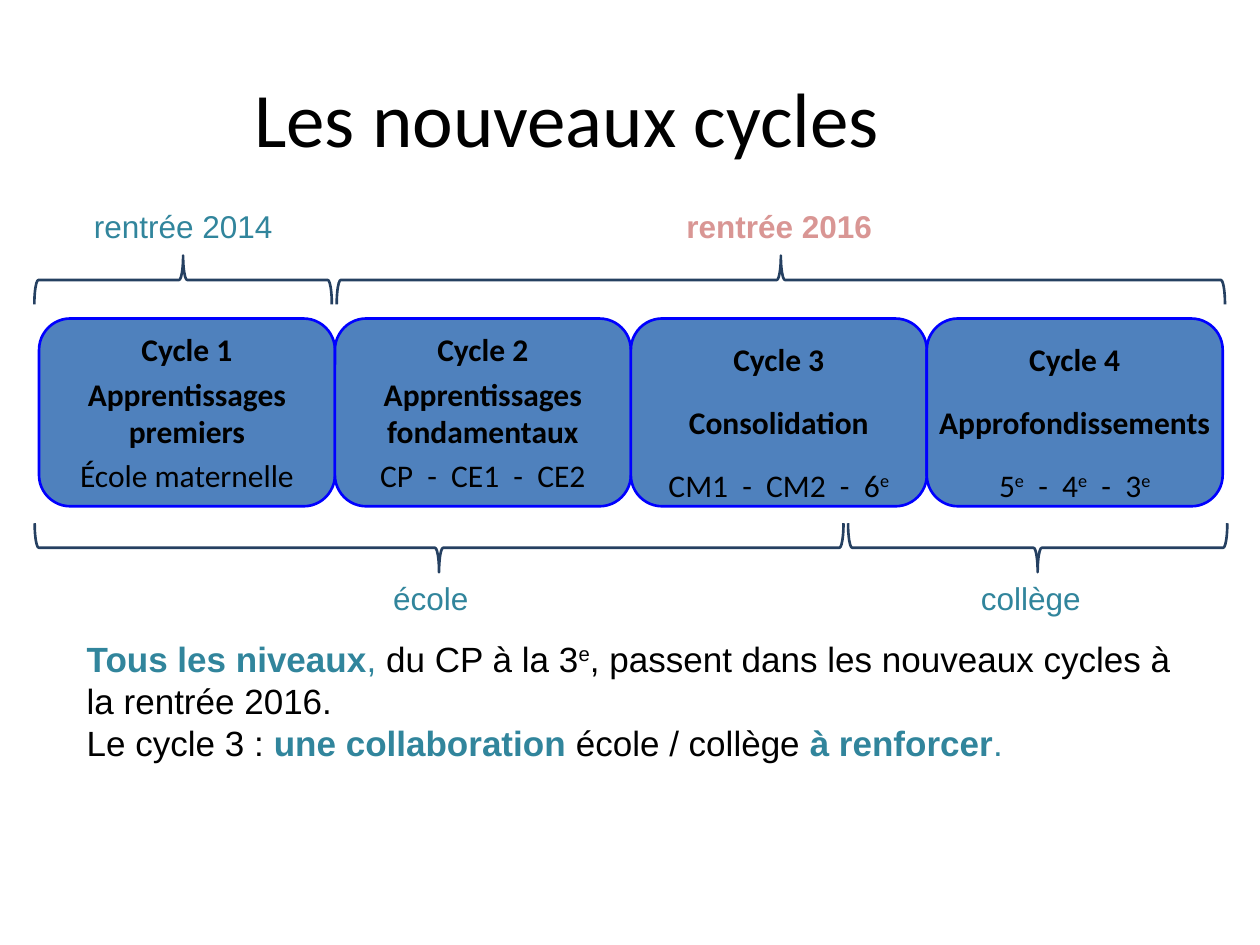
import pptx
import pptx.util
import pptx.dml.color
import pptx.enum.shapes
import pptx.enum.text

Pt = pptx.util.Pt
SHAPE = pptx.enum.shapes.MSO_SHAPE
ALIGN = pptx.enum.text.PP_ALIGN
ANCHOR = pptx.enum.text.MSO_ANCHOR
AUTO = pptx.enum.text.MSO_AUTO_SIZE

BLACK, TEAL, PINK = "000000", "31859C", "D99694"
BLUE, OUTLINE, NAVY = "4F81BD", "0000FF", "254061"
BOLD = {"bold": True}
SUP = {"sup": True}
KEY = {"bold": True, "color": TEAL}


def rgb(value):
    return pptx.dml.color.RGBColor.from_string(value)


def add_run(p, text, size=18, font="Arial", color=BLACK, bold=False, sup=False):
    r = p.add_run()
    r.text = text
    r.font.size = Pt(size)
    r.font.name = font
    r.font.color.rgb = rgb(color)
    r.font.bold = bold
    if sup:
        r.font._element.set("baseline", "30000")


def write(tf, paragraphs, align=ALIGN.CENTER, spacing=None, after=0, **fmt):
    """Each paragraph is a list of (text, format changes) runs."""
    for i, runs in enumerate(paragraphs):
        p = tf.paragraphs[0] if i == 0 else tf.add_paragraph()
        p.alignment = align
        p.space_after = Pt(after)
        if spacing:
            p.line_spacing = spacing
        for text, changes in runs:
            add_run(p, text, **{**fmt, **changes})


def add_text(s, x, y, w, h, paragraphs, anchor=ANCHOR.TOP, grow=True, **fmt):
    tf = s.shapes.add_textbox(Pt(x), Pt(y), Pt(w), Pt(h)).text_frame
    tf.word_wrap = True
    tf.auto_size = AUTO.SHAPE_TO_FIT_TEXT if grow else AUTO.NONE
    tf.vertical_anchor = anchor
    write(tf, paragraphs, **fmt)


def add_cycle(s, x, y, w, h, paragraphs, wrap, spacing):
    sp = s.shapes.add_shape(SHAPE.ROUNDED_RECTANGLE, Pt(x), Pt(y), Pt(w), Pt(h))
    sp.shadow.inherit = False
    sp.fill.solid()
    sp.fill.fore_color.rgb = rgb(BLUE)
    sp.line.color.rgb = rgb(OUTLINE)
    sp.line.width = Pt(1.5)
    tf = sp.text_frame
    tf.word_wrap = wrap
    tf.vertical_anchor = ANCHOR.MIDDLE
    write(tf, paragraphs, spacing=spacing, after=3.6, font="Calibri")


def add_brace(s, x, y, length, rotation, depth=28):
    """Horizontal brace: the upright shape is turned about its centre."""
    left = x + (length - depth) / 2
    top = y - (length - depth) / 2
    sp = s.shapes.add_shape(SHAPE.LEFT_BRACE, Pt(left), Pt(top), Pt(depth), Pt(length))
    sp.rotation = rotation
    sp.shadow.inherit = False
    sp.fill.background()
    sp.line.color.rgb = rgb(NAVY)
    sp.line.width = Pt(1.5)


def main():
    prs = pptx.Presentation()
    prs.slide_width, prs.slide_height = Pt(720), Pt(540)
    s = prs.slides.add_slide(prs.slide_layouts[6])

    # Title
    add_text(s, 0, 21.6, 648, 90, [[("Les nouveaux cycles", {})]],
             anchor=ANCHOR.MIDDLE, grow=False, size=44, font="Calibri")

    # Four adjoining cycles: name, aim, classes, wrapping, line spacing
    cycles = [
        ("Cycle 1", "Apprentissages premiers",
         [("École maternelle", {})], True, None),
        ("Cycle 2", "Apprentissages fondamentaux",
         [("CP  -  CE1  -  CE2", {})], True, None),
        ("Cycle 3", "Consolidation",
         [("CM1  -  CM2  -  6", {}), ("e", SUP)], False, 1.5),
        ("Cycle 4", "Approfondissements",
         [("5", {}), ("e", SUP), ("  -  4", {}), ("e", SUP),
          ("  -  3", {}), ("e", SUP)], False, 1.5),
    ]
    width = 169.1
    for i, (name, aim, classes, wrap, spacing) in enumerate(cycles):
        add_cycle(s, 22.3 + i * width, 182, width, 107.3,
                  [[(name, BOLD)], [(aim, BOLD)], classes], wrap, spacing)

    # Braces above (tip up) and below (tip down)
    for x, y, length, rotation in [
        (19.6, 146, 170, 90), (192.4, 146, 507.6, 90),
        (19.8, 299, 462.2, 270), (484.6, 299, 216.7, 270),
    ]:
        add_brace(s, x, y, length, rotation)

    # Brace labels
    for text, x, y, w, fmt in [
        ("rentrée 2014", 41, 114.5, 127.4, {"color": TEAL}),
        ("rentrée 2016", 381.6, 114.5, 127.4, {"color": PINK, "bold": True}),
        ("école", 212.4, 327.6, 67.7, {"color": TEAL}),
        ("collège", 549.4, 327.6, 79.2, {"color": TEAL}),
    ]:
        add_text(s, x, y, w, 28.8, [[(text, fmt)]])

    # Closing remarks
    add_text(s, 42.5, 360.7, 640.8, 80, [
        [("Tous les niveaux", KEY), (", ", {"color": TEAL}),
         ("du CP à la 3", {}), ("e", SUP),
         (", passent dans les nouveaux cycles à la rentrée 2016.", {})],
        [("Le cycle 3 : ", {}), ("une collaboration ", KEY),
         ("école / collège ", {}), ("à renforcer", KEY), (".", {"color": TEAL})],
    ], align=ALIGN.LEFT, size=20)

    prs.save("out.pptx")


if __name__ == "__main__":
    main()
